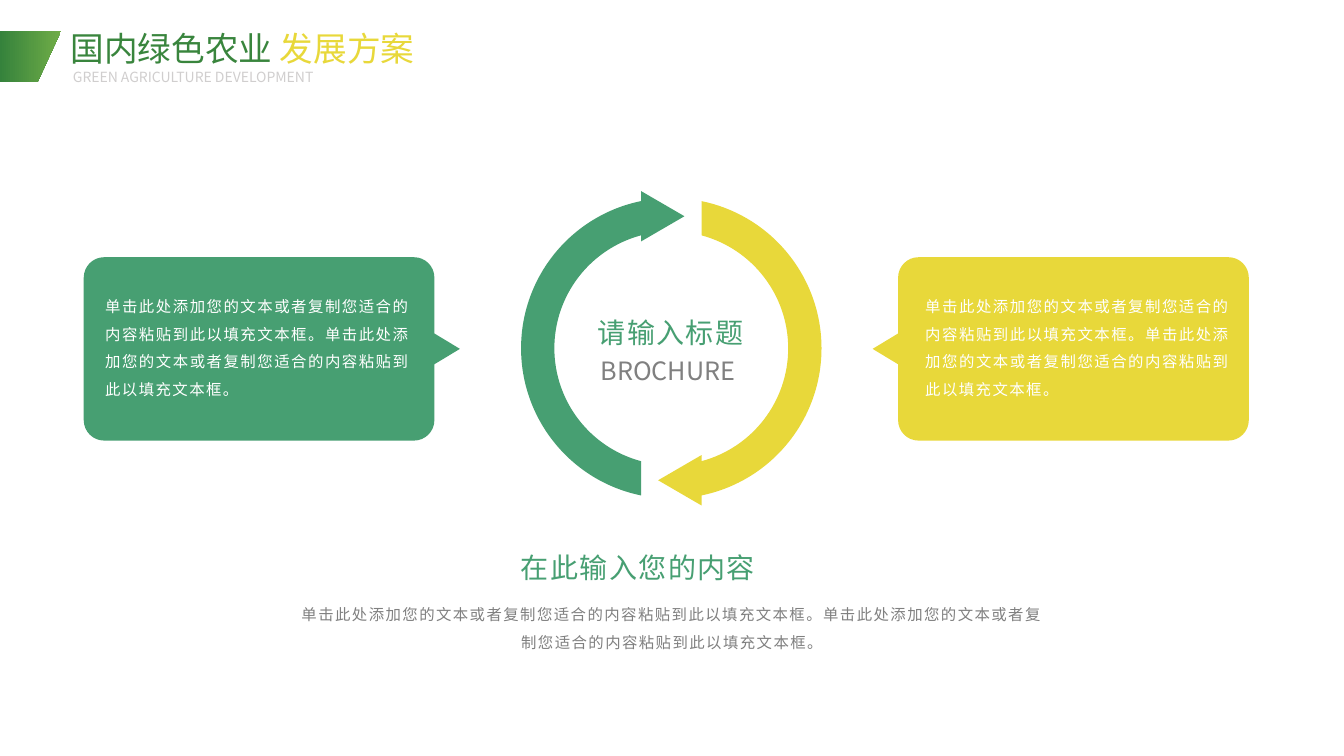
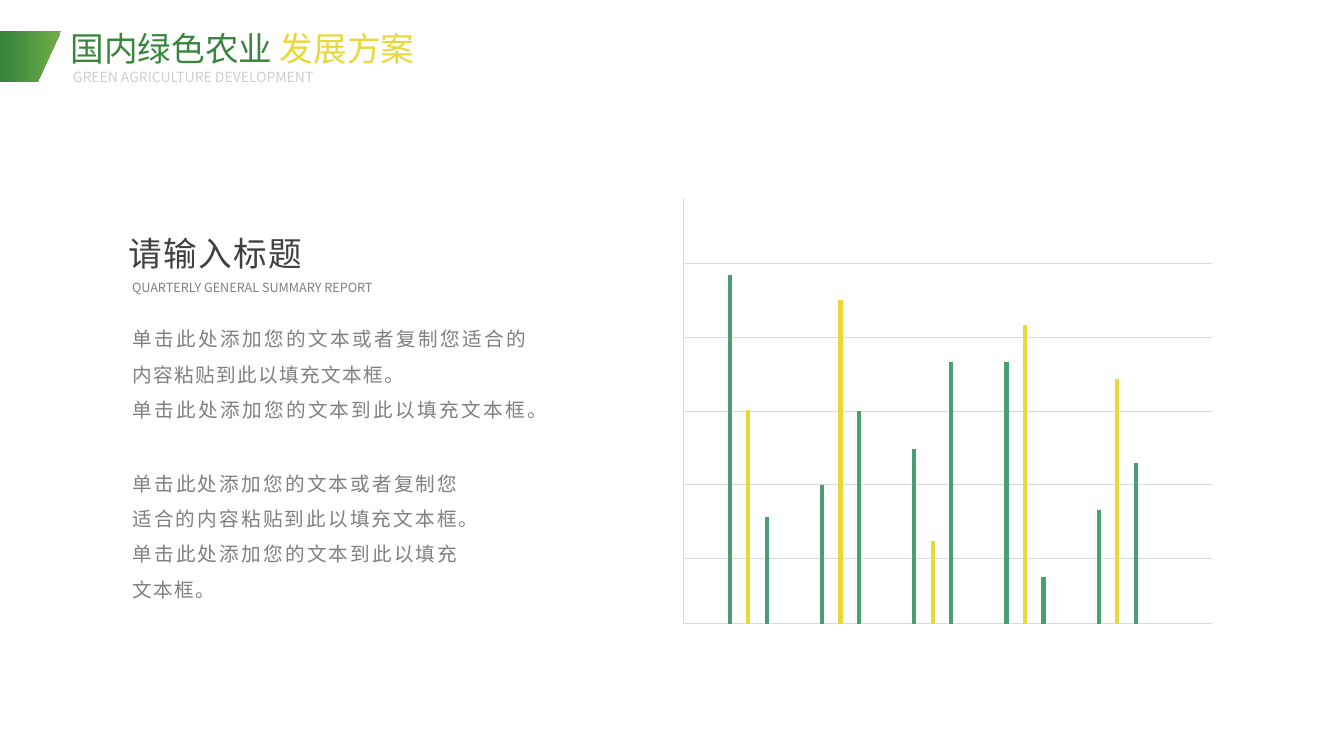
"""Build two slides on green agriculture: a cycle with callouts and a bar chart."""
from math import acos, cos, radians, pi, sin, tan

from lxml import etree
from pptx import Presentation
from pptx.dml.color import RGBColor
from pptx.enum.shapes import MSO_CONNECTOR
from pptx.enum.text import MSO_AUTO_SIZE, PP_ALIGN
from pptx.oxml.ns import qn
from pptx.util import Pt

STRAIGHT = MSO_CONNECTOR.STRAIGHT
FIT_TEXT = MSO_AUTO_SIZE.SHAPE_TO_FIT_TEXT
JUSTIFY, CENTER = PP_ALIGN.JUSTIFY, PP_ALIGN.CENTER

FONT = "Noto Sans CJK SC"
GREEN = RGBColor(0x47, 0x9F, 0x72)
YELLOW = RGBColor(0xE8, 0xD8, 0x3A)
TITLE_GREEN = RGBColor(0x39, 0x85, 0x3D)
BAND_COLORS = (RGBColor(0x35, 0x82, 0x3C), RGBColor(0x70, 0xAD, 0x47))
WHITE = RGBColor(0xFF, 0xFF, 0xFF)
DARK = RGBColor(0x40, 0x40, 0x40)
GRAY = RGBColor(0x80, 0x80, 0x80)
PALE = RGBColor(0xD0, 0xCE, 0xCE)
AXIS_GRAY = RGBColor(0xDB, 0xDB, 0xDB)
GRID_GRAY = RGBColor(0xD9, 0xD9, 0xD9)

TITLE = ("国内绿色农业 ", "发展方案")
SUBTITLE = "GREEN AGRICULTURE DEVELOPMENT"
BAND = [(0, 22.3), (43.5, 22.3), (26.8, 58.7), (0, 58.7)]

LONG = "单击此处添加您的文本或者复制您适合的内容粘贴到此以填充文本框。"
SHORT = "单击此处添加您的文本到此以填充文本框。"

CALLOUT_STYLE = dict(size=11, color=WHITE, spacing=1, leading=1.5)
REPORT_STYLE = dict(size=14, color=GRAY, spacing=1, leading=1.5)
CYCLE_TEXTS = [
    ((419.8, 221.8, 121, 32), ["请输入标题"], dict(size=20, color=GREEN, spacing=1)),
    ((421.9, 250.3, 121, 29), ["BROCHURE"], dict(size=18, color=GRAY)),
    ((68, 202, 231.8, 107), [LONG * 2], CALLOUT_STYLE),
    ((653.8, 202, 231.8, 107), [LONG * 2], CALLOUT_STYLE),
    ((365, 389.5, 230.4, 32), ["在此输入您的内容"], dict(size=20, color=GREEN, spacing=1)),
    ((203.2, 422.2, 553.7, 67), [LONG * 2],
     dict(size=11, color=GRAY, spacing=1, leading=1.5, align=CENTER)),
]
REPORT_TEXTS = [
    ((85, 162.7, 162, 36), ["请输入标题"], dict(size=24, color=DARK, spacing=1)),
    ((87.3, 196.6, 255, 18), ["QUARTERLY GENERAL SUMMARY REPORT"], dict(size=9, color=GRAY)),
    ((87.5, 221.8, 296.3, 109), [LONG, SHORT], REPORT_STYLE),
    ((87.5, 325, 247.4, 135), [LONG, SHORT], REPORT_STYLE),
]

RING_CENTER, RING_OUTER, RING_INNER = (479.5, 248.8), 107.3, 83.5
RING_CUT = -21.6
ARROW_HEAD = [(RING_CUT, -112.3), (9.4, -94.3), (RING_CUT, -76.3)]

CALLOUT_LEFT, CALLOUT_TOP, CALLOUT_RIGHT, CALLOUT_BOTTOM = 59.8, 183.7, 310.3, 314.7
CALLOUT_RADIUS, CALLOUT_TIP, CALLOUT_HALF_BASE = 14.6, 328.5, 11
MIRROR_WIDTH = 951.8

AXIS_LEFT, AXIS_TOP, AXIS_RIGHT, AXIS_BASE = 488.2, 141.1, 865.4, 445.6
GRID_LEFT, GRID_LOWEST, GRID_STEP, GRID_COUNT = 489.6, 398.9, 52.75, 5
BAR_HEIGHTS = [(249.1, 152.6, 76.3), (99.4, 231.1, 152.3), (124.6, 59, 187.2),
               (187.2, 213.8, 33.8), (81.4, 175, 115.2)]
BAR_COLORS = (GREEN, YELLOW, GREEN)
BAR_FIRST, BAR_STEP, GROUP_STEP = 521.3, 13.2, 65.9


def style_span(span, size, color, spacing=0):
    span.font.size, span.font.name = Pt(size), FONT
    span.font.color.rgb = color
    properties = span.font._element
    if spacing:
        properties.set("spc", str(spacing * 100))
    etree.SubElement(properties, qn("a:ea")).set("typeface", FONT)


def add_text(slide, place, lines, size, color, spacing=0, leading=None, align=JUSTIFY):
    box = slide.shapes.add_textbox(*map(Pt, place))
    frame = box.text_frame
    frame.text = "\n".join(lines)
    frame.word_wrap, frame.auto_size = True, FIT_TEXT
    for para in frame.paragraphs:
        para.alignment, para.line_spacing = align, leading
        for span in para.runs:
            style_span(span, size, color, spacing)
    return box


def add_outline(slide, points, curves=(), close=True):
    """Draw a polygon in which each index in curves starts a control, control, end triple."""
    corners = [(Pt(x), Pt(y)) for x, y in points]
    builder = slide.shapes.build_freeform(*corners[0])
    builder.add_line_segments(corners[1:], close=close)
    shape = builder.convert_to_shape()
    shape.shadow.inherit = False
    segments = list(shape._element.iter(qn("a:lnTo")))
    for index in curves:
        first, *others = segments[index - 1:index + 2]
        first.tag = qn("a:cubicBezTo")
        for segment in others:
            first.append(segment[0])
            segment.getparent().remove(segment)
    return shape


def add_solid(slide, points, curves, color):
    shape = add_outline(slide, points, curves)
    shape.line.fill.background()
    shape.fill.solid()
    shape.fill.fore_color.rgb = color


def add_line(slide, start, end, color, width):
    line = slide.shapes.add_connector(STRAIGHT, *map(Pt, start + end))
    line.line.color.rgb, line.line.width = color, Pt(width)
    etree.SubElement(line._element.spPr, qn("a:effectLst"))


def add_arc(points, curves, center, radius, start, end, pieces=1):
    turn = (end - start) / pieces
    pull = 4 / 3 * tan(turn / 4)

    def place(angle, tangent=0):
        return (center[0] + radius * (cos(angle) - tangent * sin(angle)),
                center[1] + radius * (sin(angle) + tangent * cos(angle)))

    points.append(place(start))
    for piece in range(pieces):
        begin, finish = start + piece * turn, start + (piece + 1) * turn
        curves.append(len(points))
        points += [place(begin, pull), place(finish, -pull), place(finish)]


def ring_arrow():
    points, curves = list(ARROW_HEAD), []
    inner, outer = (acos(RING_CUT / radius) for radius in (RING_INNER, RING_OUTER))
    add_arc(points, curves, (0, 0), RING_INNER, 2 * pi - inner, inner, 2)
    add_arc(points, curves, (0, 0), RING_OUTER, outer, 2 * pi - outer, 2)
    return points, curves


def callout():
    left, right = CALLOUT_LEFT + CALLOUT_RADIUS, CALLOUT_RIGHT - CALLOUT_RADIUS
    top, bottom = CALLOUT_TOP + CALLOUT_RADIUS, CALLOUT_BOTTOM - CALLOUT_RADIUS
    middle = (top + bottom) / 2
    points = [(CALLOUT_RIGHT, middle - CALLOUT_HALF_BASE), (CALLOUT_TIP, middle),
              (CALLOUT_RIGHT, middle + CALLOUT_HALF_BASE)]
    curves = []
    centers = [(right, bottom), (left, bottom), (left, top), (right, top)]
    for quarter, center in enumerate(centers):
        start = radians(90 * quarter)
        add_arc(points, curves, center, CALLOUT_RADIUS, start, start + pi / 2)
    return points, curves


def add_header(slide):
    band = add_outline(slide, BAND)
    band.line.fill.background()
    band.fill.gradient()
    band.fill.gradient_angle = 0
    for stop, color in zip(band.fill.gradient_stops, BAND_COLORS):
        stop.color.rgb = color
    title = add_text(slide, (43.4, 16.2, 284, 36), TITLE[:1], 24, TITLE_GREEN)
    span = title.text_frame.paragraphs[0].add_run()
    span.text = TITLE[1]
    style_span(span, 24, YELLOW)
    add_text(slide, (45, 45.4, 282, 19), [SUBTITLE], 10, PALE)


def add_cycle(slide):
    points, curves = ring_arrow()
    for sign, color in ((1, GREEN), (-1, YELLOW)):
        turned = [(RING_CENTER[0] + sign * x, RING_CENTER[1] + sign * y) for x, y in points]
        add_solid(slide, turned, curves, color)
    points, curves = callout()
    add_solid(slide, [(MIRROR_WIDTH - x, y) for x, y in points], curves, YELLOW)
    add_solid(slide, points, curves, GREEN)


def add_bars(slide):
    corners = [(AXIS_LEFT, AXIS_TOP), (AXIS_LEFT, AXIS_BASE), (AXIS_RIGHT, AXIS_BASE)]
    axes = add_outline(slide, corners, close=False)
    axes.fill.background()
    axes.line.color.rgb, axes.line.width = AXIS_GRAY, Pt(0.63)
    for row in range(GRID_COUNT):
        y = GRID_LOWEST - row * GRID_STEP
        add_line(slide, (GRID_LEFT, y), (AXIS_RIGHT, y), GRID_GRAY, 0.25)
    for group, heights in enumerate(BAR_HEIGHTS):
        for bar, (height, color) in enumerate(zip(heights, BAR_COLORS)):
            x = BAR_FIRST + group * GROUP_STEP + bar * BAR_STEP
            add_line(slide, (x, AXIS_BASE - height), (x, AXIS_BASE), color, 3)


def main():
    deck = Presentation()
    deck.slide_width, deck.slide_height = Pt(960), Pt(540)
    for draw, texts in ((add_cycle, CYCLE_TEXTS), (add_bars, REPORT_TEXTS)):
        slide = deck.slides.add_slide(deck.slide_layouts[6])
        add_header(slide)
        draw(slide)
        for place, lines, style in texts:
            add_text(slide, place, lines, **style)
    deck.save("out.pptx")


if __name__ == "__main__":
    main()
